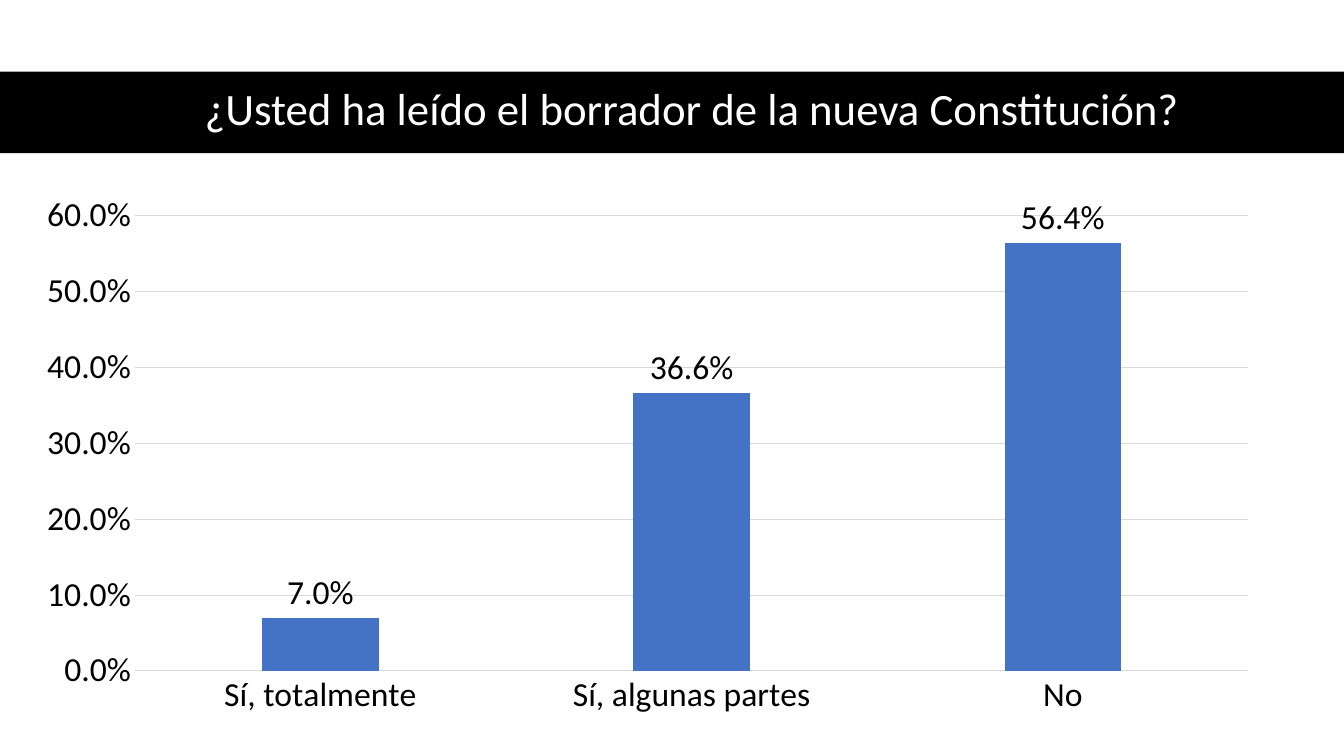
import pptx
import pptx.chart.data
import pptx.dml.color
import pptx.enum.chart
import pptx.enum.shapes
import pptx.enum.text
import pptx.util
from pptx.util import Inches

RGBColor = pptx.dml.color.RGBColor
BLACK = RGBColor(0x00, 0x00, 0x00)
WHITE = RGBColor(0xFF, 0xFF, 0xFF)
BLUE = RGBColor(0x44, 0x72, 0xC4)
GREY = RGBColor(0xD9, 0xD9, 0xD9)

TITLE = "¿Usted ha leído el borrador de la nueva Constitución?"
VOTES = {"Sí, totalmente": 0.07, "Sí, algunas partes": 0.366, "No": 0.564}
PERCENT = "0.0%"

WIDTH, HEIGHT = 13.33, 7.5
BAND = (0, 0.71, WIDTH, 0.81)
TITLE_BOX = (0.61, 0.7, 12.26, 0.81)
CHART_BOX = (0.22, 1.83, 12.41, 5.38)


def inches(box):
    return [Inches(n) for n in box]


def set_all(item, **values):
    for name, value in values.items():
        setattr(item, name, value)


def set_font(font, size, color):
    set_all(font, name="Calibri", size=pptx.util.Pt(size), bold=False)
    font.color.rgb = color


def set_line(line):
    line.color.rgb = GREY
    line.width = pptx.util.Pt(0.75)


def add_band(slide):
    band = slide.shapes.add_shape(
        pptx.enum.shapes.MSO_SHAPE.RECTANGLE, *inches(BAND))
    band.shadow.inherit = False
    band.fill.solid()
    band.fill.fore_color.rgb = BLACK
    band.line.fill.background()


def add_title(slide):
    frame = slide.shapes.add_textbox(*inches(TITLE_BOX)).text_frame
    set_all(frame, word_wrap=True,
            vertical_anchor=pptx.enum.text.MSO_ANCHOR.MIDDLE)
    para = frame.paragraphs[0]
    set_all(para, alignment=pptx.enum.text.PP_ALIGN.CENTER,
            line_spacing=0.9, space_after=pptx.util.Pt(8))
    para._p.get_or_add_pPr().set("marL", str(Inches(0.25)))
    run = para.add_run()
    run.text = TITLE
    set_font(run.font, 32, WHITE)


def add_votes(slide):
    enum = pptx.enum.chart
    data = pptx.chart.data.CategoryChartData(number_format=PERCENT)
    data.categories = list(VOTES)
    data.add_series("Series 1", list(VOTES.values()))
    chart = slide.shapes.add_chart(
        enum.XL_CHART_TYPE.COLUMN_CLUSTERED, *inches(CHART_BOX), data).chart
    set_all(chart, has_legend=False, has_title=False)
    set_font(chart.font, 24, BLACK)

    for axis in (chart.category_axis, chart.value_axis):
        set_all(axis, major_tick_mark=enum.XL_TICK_MARK.NONE,
                minor_tick_mark=enum.XL_TICK_MARK.NONE)
        set_font(axis.tick_labels.font, 24, BLACK)
    set_line(chart.category_axis.format.line)
    scale = chart.value_axis
    set_all(scale, minimum_scale=0, maximum_scale=0.6, major_unit=0.1)
    scale.format.line.fill.background()
    set_line(scale.major_gridlines.format.line)
    set_all(scale.tick_labels, number_format=PERCENT,
            number_format_is_linked=False)

    plot = chart.plots[0]
    set_all(plot, gap_width=219, overlap=-27, vary_by_categories=False)
    bars = plot.series[0]
    bars.format.fill.solid()
    bars.format.fill.fore_color.rgb = BLUE
    labels = bars.data_labels
    set_all(labels, show_value=True, number_format=PERCENT,
            number_format_is_linked=False,
            position=enum.XL_LABEL_POSITION.OUTSIDE_END)
    set_font(labels.font, 24, BLACK)


def main():
    deck = pptx.Presentation()
    set_all(deck, slide_width=Inches(WIDTH), slide_height=Inches(HEIGHT))
    slide = deck.slides.add_slide(deck.slide_layouts[6])
    add_band(slide)
    add_title(slide)
    add_votes(slide)
    deck.save("out.pptx")


if __name__ == "__main__":
    main()
